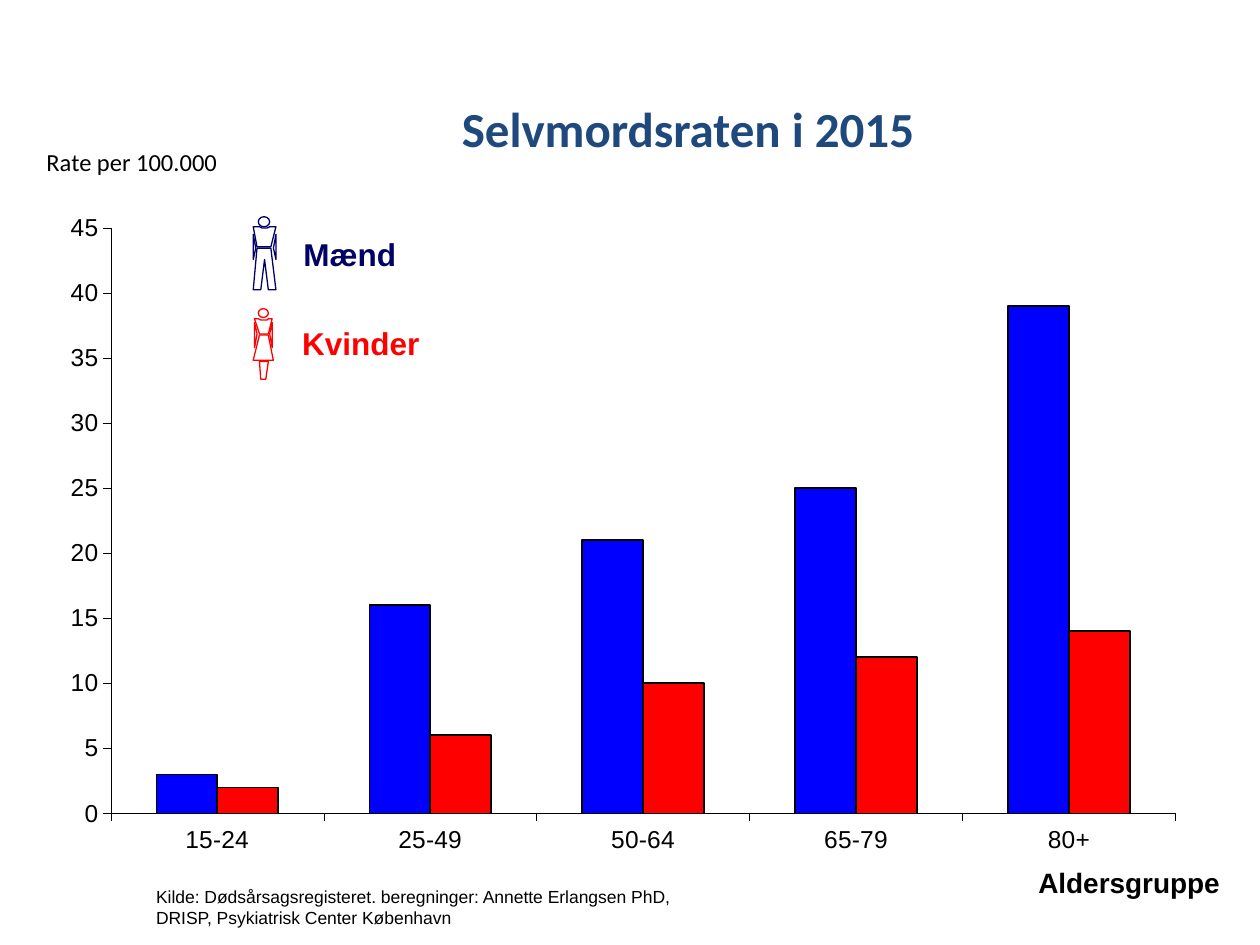
import pptx
import pptx.chart.data
import pptx.dml.color
import pptx.enum.chart
import pptx.enum.shapes
import pptx.enum.text
import pptx.util
from lxml import etree

COLORS = {"black": "000000", "title": "1F497D", "navy": "000066",
          "men": "0000FF", "women": "FF0000"}
COLUMNS, ROWS = 1000, 750
ALIGN = pptx.enum.text.PP_ALIGN
CHART_NS = "http://schemas.openxmlformats.org/drawingml/2006/chart"


def color(name):
    return pptx.dml.color.RGBColor.from_string(COLORS[name])


def set_line(line, color_name, width):
    line.color.rgb = color(color_name)
    line.width = pptx.util.Pt(width)


def set_font(font, name, size, color_name, bold=False):
    font.name = name
    font.size = pptx.util.Pt(size)
    font.bold = bold
    font.color.rgb = color(color_name)


class SlideBuilder:
    """Draws on one slide; lengths are columns and rows of its grid."""

    def __init__(self, presentation):
        self.slide = presentation.slides.add_slide(presentation.slide_layouts[5])
        self.column = presentation.slide_width // COLUMNS
        self.row = presentation.slide_height // ROWS

    def box(self, left, top, width, height):
        return (left * self.column, top * self.row,
                width * self.column, height * self.row)

    def fill_text(self, shape, text, name, size, color_name, bold, align):
        frame = shape.text_frame
        frame.word_wrap = True
        paragraph = frame.paragraphs[0]
        paragraph.text = text
        paragraph.alignment = align
        set_font(paragraph.font, name, size, color_name, bold)
        return frame

    def title(self, text, place):
        shape = self.slide.shapes.title
        shape.left, shape.top, shape.width, shape.height = self.box(*place)
        frame = self.fill_text(shape, text, "Calibri", 28, "title", True, ALIGN.CENTER)
        frame.vertical_anchor = pptx.enum.text.MSO_ANCHOR.MIDDLE
        frame.margin_left = frame.margin_right = 0
        frame.margin_top = frame.margin_bottom = 0

    def text(self, text, place, name="Arial", size=18, color_name="black",
             bold=False, align=ALIGN.LEFT, parent=None):
        shapes = (parent or self.slide).shapes
        shape = shapes.add_textbox(*self.box(*place))
        self.fill_text(shape, text, name, size, color_name, bold, align)

    def outline(self, shape, color_name):
        shape.shadow.inherit = False
        shape.fill.background()
        set_line(shape.line, color_name, 0)

    def figure(self, label, label_place, color_name, head, outlines):
        """Group a label with a person made of a head and closed outlines."""
        group = self.slide.shapes.add_group_shape()
        self.text(label, label_place, color_name=color_name, bold=True, parent=group)
        oval = pptx.enum.shapes.MSO_SHAPE.OVAL
        self.outline(group.shapes.add_shape(oval, *self.box(*head)), color_name)
        for points in outlines:
            builder = group.shapes.build_freeform(
                *points[0], scale=(self.column, self.row))
            builder.add_line_segments(points[1:], close=True)
            self.outline(builder.convert_to_shape(), color_name)

    def column_chart(self, categories, series, place, plot):
        data = pptx.chart.data.CategoryChartData(number_format="0")
        data.categories = categories
        for name, values, _ in series:
            data.add_series(name, values)
        chart = self.slide.shapes.add_chart(
            pptx.enum.chart.XL_CHART_TYPE.COLUMN_CLUSTERED,
            *self.box(*place), data).chart
        chart.has_legend = chart.has_title = False
        set_font(chart.font, "Arial", 14, "black")
        bars = chart.plots[0]
        bars.gap_width, bars.overlap = 150, 0
        bars.vary_by_categories = False
        for bar_series, (_, _, color_name) in zip(bars.series, series):
            bar_series.format.fill.solid()
            bar_series.format.fill.fore_color.rgb = color(color_name)
            set_line(bar_series.format.line, "black", 1)
        for axis in (chart.category_axis, chart.value_axis):
            axis.has_major_gridlines = False
            axis.major_tick_mark = pptx.enum.chart.XL_TICK_MARK.OUTSIDE
            axis.minor_tick_mark = pptx.enum.chart.XL_TICK_MARK.NONE
            set_font(axis.tick_labels.font, "Arial", 14, "black")
            set_line(axis.format.line, "black", 0.25)
        axis = chart.value_axis
        axis.minimum_scale, axis.maximum_scale, axis.major_unit = 0, 45, 5
        axis.tick_labels.number_format = "0"
        axis.tick_labels.number_format_is_linked = False
        self.place_plot(chart, plot)

    def place_plot(self, chart, plot):
        """Fix the inner plot area, given as shares of the chart."""
        area = chart.plots[0]._element.getparent()
        for old in area.findall(f"{{{CHART_NS}}}layout"):
            area.remove(old)
        layout = etree.Element(f"{{{CHART_NS}}}layout")
        manual = etree.SubElement(layout, f"{{{CHART_NS}}}manualLayout")
        settings = [("layoutTarget", "inner"), ("xMode", "edge"), ("yMode", "edge")]
        for tag, value in settings + list(zip("xywh", plot)):
            etree.SubElement(manual, f"{{{CHART_NS}}}{tag}", val=str(value))
        area.insert(0, layout)


def mirrored(points, axis):
    return [(2 * axis - x, y) for x, y in points]


def main():
    presentation = pptx.Presentation()
    presentation.slide_width = pptx.util.Inches(10)
    presentation.slide_height = pptx.util.Inches(7.5)
    builder = SlideBuilder(presentation)

    builder.title("Selvmordsraten i 2015", (150, 60, 792, 83))
    builder.column_chart(
        ["15-24", "25-49", "50-64", "65-79", "80+"],
        [("Mænd", (3, 16, 21, 25, 39), "men"),
         ("Kvinder", (2, 6, 10, 12, 14), "women")],
        (43, 117, 899, 581), (0.05, 0.11, 0.94, 0.8))
    builder.text("Aldersgruppe", (776, 682, 202, 37), size=16, bold=True,
                 align=ALIGN.RIGHT)

    man_arm = [(201, 186), (201, 206), (203, 197)]
    man_torso = [(201, 180), (206, 180), (208, 181), (212, 181), (214, 180),
                 (219, 180), (215, 196), (204, 196)]
    man_legs = [(204, 197), (215, 197), (219, 230), (213, 230), (210, 206),
                (207, 230), (201, 230)]
    builder.figure("Mænd", (231, 182, 120, 40), "navy", (205, 172, 9, 8),
                   [man_torso, man_arm, mirrored(man_arm, 210), man_legs])

    woman_arm = [(202, 276), (202, 256), (204, 265)]
    woman_torso = [(213, 265), (206, 265), (202, 253), (205, 253), (207, 254),
                   (212, 254), (213, 253), (216, 253)]
    skirt = [(217, 286), (201, 286), (206, 266), (213, 266)]
    woman_legs = [(206, 287), (213, 287), (211, 301), (207, 301)]
    builder.figure("Kvinder", (230, 252, 126, 40), "women", (205, 245, 8, 7),
                   [skirt, woman_legs, woman_torso, woman_arm,
                    mirrored(woman_arm, 209)])

    builder.text("Kilde: Dødsårsagsregisteret. beregninger: Annette Erlangsen PhD, "
                 "DRISP, Psykiatrisk Center København", (114, 698, 441, 52), size=10)
    builder.text("Rate per 100.000", (27, 112, 268, 34), name="Calibri", size=14)
    presentation.save("out.pptx")


if __name__ == "__main__":
    main()
